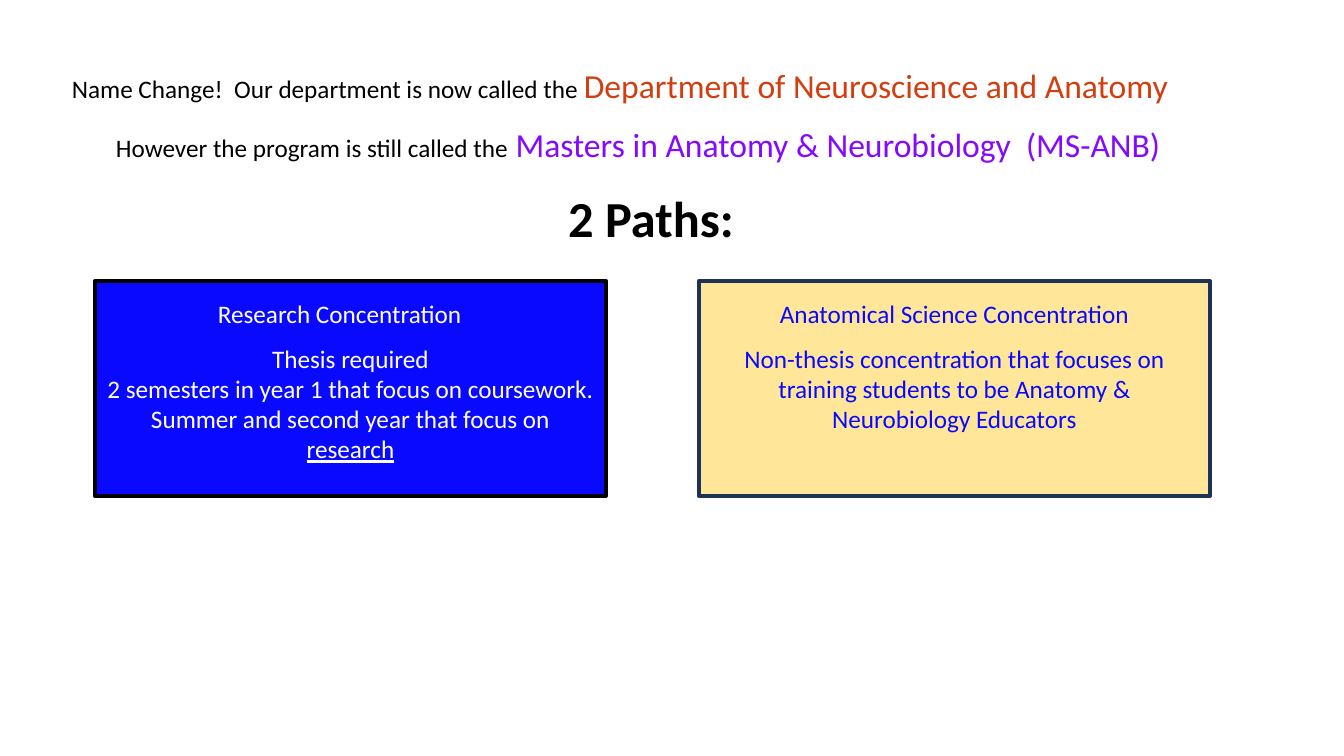
from pptx import Presentation
from pptx.dml.color import RGBColor
from pptx.enum.shapes import MSO_SHAPE as Shape
from pptx.enum.text import MSO_ANCHOR as Anchor, MSO_AUTO_SIZE as AutoSize, PP_ALIGN as Align
from pptx.util import Pt

BLACK = RGBColor(0x00, 0x00, 0x00)
WHITE = RGBColor(0xFF, 0xFF, 0xFF)
RUST = RGBColor(0xD3, 0x3E, 0x11)
VIOLET = RGBColor(0x84, 0x09, 0xFF)
BLUE = RGBColor(0x09, 0x09, 0xFF)
SAND = RGBColor(0xFF, 0xE6, 0x99)
NAVY = RGBColor(0x1E, 0x32, 0x56)

FONT = "Calibri"
EMU_PER_PX = 12192000 / 1344
SLIDE = (1344, 756)

TITLE = ("2 Paths:", (557, 182, 188, 72))
ANNOUNCEMENTS = [
    ("Name Change!  Our department is now called the ",
     "Department of Neuroscience and Anatomy", RUST, (62, 60, 1178, 50)),
    ("However the program is still called the",
     " Masters in Anatomy & Neurobiology  (MS-ANB)", VIOLET, (106, 119, 1090, 50)),
]
PATHS = [
    {"heading": "Research Concentration", "heading_left": 208, "heading_width": 280,
     "left": 95, "fill": BLUE, "border": BLACK, "ink": WHITE,
     "details": [[("Thesis required", False)],
                 [("2 semesters in year 1 that focus on coursework.", False)],
                 [("Summer and second year that focus on ", False), ("research", True)]]},
    {"heading": "Anatomical Science Concentration", "heading_left": 770, "heading_width": 374,
     "left": 699, "fill": SAND, "border": NAVY, "ink": BLUE,
     "details": [[("Non-thesis concentration that focuses on training students "
                   "to be Anatomy & Neurobiology Educators", False)]]},
]
PANEL_TOP, PANEL_WIDTH, PANEL_HEIGHT = 281, 511, 215
HEADING_OFFSET, HEADING_HEIGHT, DETAILS_OFFSET = 12, 40, 62


def px(length):
    """Turn pixels into EMU."""
    return round(length * EMU_PER_PX)


def style(font, size, color, bold=False):
    """Apply the slide's font with a size and colour."""
    font.name, font.size, font.bold = FONT, Pt(size), bold
    font.color.rgb = color


def add_line(slide, box):
    """Add a wrapping text box and return its paragraph."""
    frame = slide.shapes.add_textbox(*map(px, box)).text_frame
    frame.word_wrap = True
    return frame.paragraphs[0]


def add_title(slide):
    """Place and format the title."""
    text, box = TITLE
    title = slide.shapes.title
    title.left, title.top, title.width, title.height = map(px, box)
    frame = title.text_frame
    frame.text = text
    frame.word_wrap = False
    frame.auto_size = AutoSize.NONE
    frame.vertical_anchor = Anchor.TOP
    frame.paragraphs[0].alignment = Align.CENTER
    style(frame.paragraphs[0].font, 36, BLACK, True)


def add_announcement(slide, lead, name, color, box):
    """Add a sentence that ends in a larger coloured name."""
    sentence = add_line(slide, box)
    for text, size, ink in ((lead, 18, BLACK), (name, 24, color)):
        run = sentence.add_run()
        run.text = text
        style(run.font, size, ink)


def add_path(slide, path):
    """Add a panel with its details and heading."""
    panel = slide.shapes.add_shape(
        Shape.RECTANGLE, *map(px, (path["left"], PANEL_TOP, PANEL_WIDTH, PANEL_HEIGHT)))
    panel.shadow.inherit = False
    panel.fill.solid()
    panel.fill.fore_color.rgb = path["fill"]
    panel.line.color.rgb = path["border"]
    panel.line.width = Pt(3)
    frame = panel.text_frame
    frame.word_wrap = True
    frame.vertical_anchor = Anchor.TOP
    frame.margin_top = px(DETAILS_OFFSET)
    for index, detail in enumerate(path["details"]):
        paragraph = frame.add_paragraph() if index else frame.paragraphs[0]
        paragraph.alignment = Align.CENTER
        style(paragraph.font, 18, path["ink"])
        for text, underlined in detail:
            run = paragraph.add_run()
            run.text = text
            if underlined:
                run.font.underline = True
    heading = add_line(slide, (path["heading_left"], PANEL_TOP + HEADING_OFFSET,
                               path["heading_width"], HEADING_HEIGHT))
    heading.text = path["heading"]
    style(heading.font, 18, path["ink"])


def main():
    """Build and save the slide."""
    deck = Presentation()
    deck.slide_width, deck.slide_height = map(px, SLIDE)
    slide = deck.slides.add_slide(deck.slide_layouts[5])
    add_title(slide)
    for announcement in ANNOUNCEMENTS:
        add_announcement(slide, *announcement)
    for path in PATHS:
        add_path(slide, path)
    deck.save("out.pptx")


if __name__ == "__main__":
    main()
